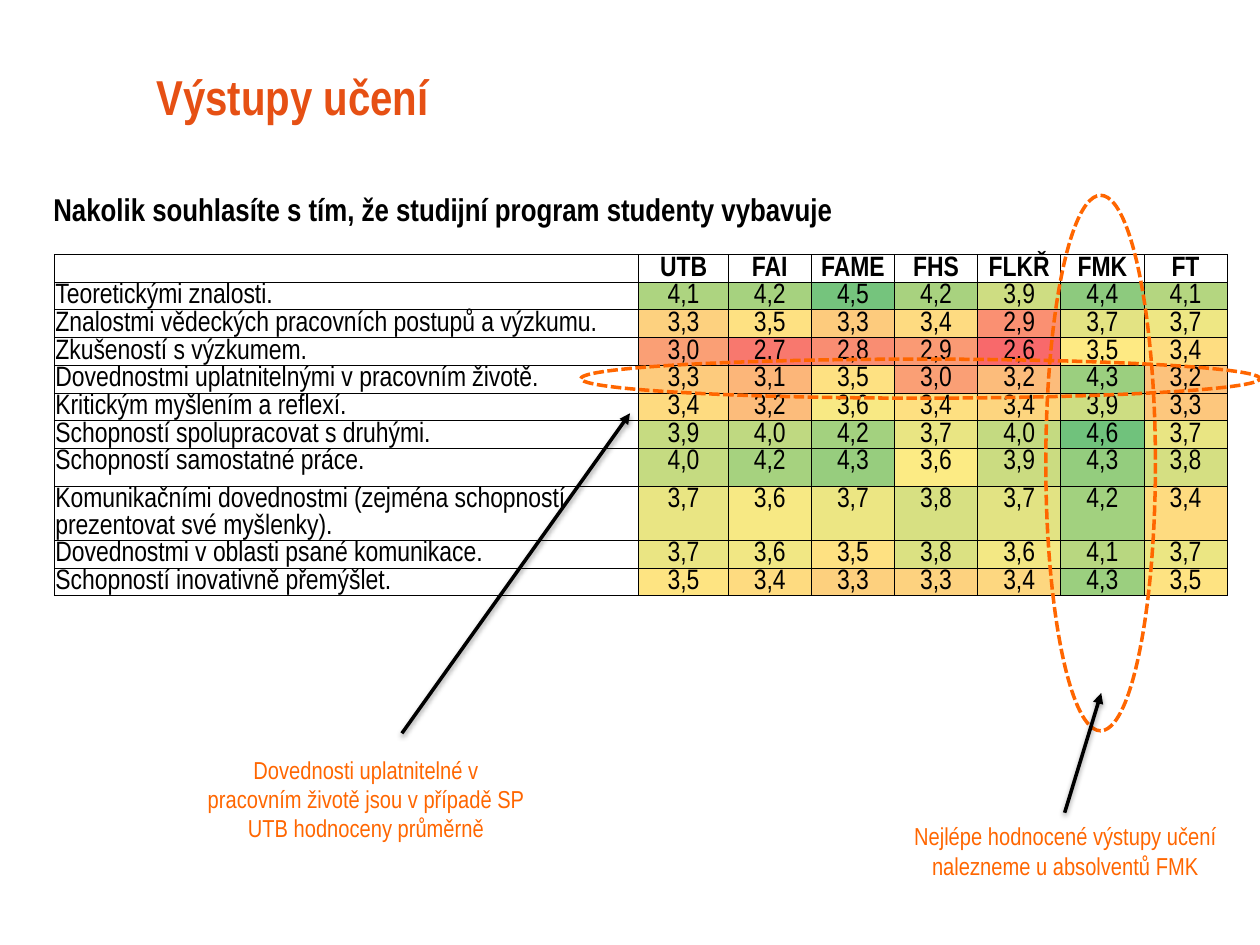
"""Build the slide on learning outcomes by faculty."""
from lxml import etree
from pptx import Presentation
from pptx.dml.color import RGBColor
from pptx.enum.dml import MSO_LINE
from pptx.enum.shapes import MSO_CONNECTOR, MSO_SHAPE
from pptx.enum.text import MSO_ANCHOR, MSO_AUTO_SIZE, PP_ALIGN
from pptx.oxml.ns import qn
from pptx.util import Inches, Pt

LEFT, CENTER = PP_ALIGN.LEFT, PP_ALIGN.CENTER
TOP, MIDDLE, BOTTOM = MSO_ANCHOR.TOP, MSO_ANCHOR.MIDDLE, MSO_ANCHOR.BOTTOM
FIT = MSO_AUTO_SIZE.SHAPE_TO_FIT_TEXT
DASH = MSO_LINE.SQUARE_DOT
OVAL = MSO_SHAPE.OVAL
STRAIGHT = MSO_CONNECTOR.STRAIGHT

FONT = "Arial Narrow"
RED = RGBColor(0xE6, 0x50, 0x14)
ORANGE = RGBColor(0xFF, 0x66, 0x00)
BLACK = RGBColor(0, 0, 0)

WIDTHS = [4.64, 0.71] + [0.66] * 6
HEIGHTS = [0.22] * 7 + [0.3, 0.43] + [0.22] * 2
HEAD = ["", "UTB", "FAI", "FAME", "FHS", "FLKŘ", "FMK", "FT"]
ROWS = [
    ("Teoretickými znalosti.",
     "4,1 4,2 4,5 4,2 3,9 4,4 4,1",
     "ADD480 A6D27F 75C47D A8D27F CEDD82 8DCA7E B4D680"),
    ("Znalostmi vědeckých pracovních postupů a výzkumu.",
     "3,3 3,5 3,3 3,4 2,9 3,7 3,7",
     "FDD17F FEE182 FDCB7D FEDB81 FA9072 E3E383 EEE784"),
    ("Zkušeností s výzkumem.",
     "3,0 2,7 2,8 2,9 2,6 3,5 3,4",
     "FA9F75 F8786E F98D72 FA9A74 F8696B FEEA83 FEDD81"),
    ("Dovednostmi uplatnitelnými v pracovním životě.",
     "3,3 3,1 3,5 3,0 3,2 4,3 3,2",
     "FDCB7D FCB679 FEE182 FA9F75 FCBC7B 9BCF7F FCC27C"),
    ("Kritickým myšlením a reflexí.",
     "3,4 3,2 3,6 3,4 3,4 3,9 3,3",
     "FEDB80 FCBC7B F8E984 FEE081 FDD57F CDDD82 FDC77D"),
    ("Schopností spolupracovat s druhými.",
     "3,9 4,0 4,2 3,7 4,0 4,6 3,7",
     "C6DB81 BFD981 A3D17F E9E583 C4DA81 70C27C E9E583"),
    ("Schopností samostatné práce.",
     "4,0 4,2 4,3 3,6 3,9 4,3 3,8",
     "C5DB81 A6D27F 97CD7E FCEB84 CBDC81 94CD7E D5DF82"),
    ("Komunikačními dovednostmi (zejména schopností prezentovat své myšlenky).",
     "3,7 3,6 3,7 3,8 3,7 4,2 3,4",
     "E9E583 F7E984 ECE683 D7E082 E2E383 A2D17F FEDB80"),
    ("Dovednostmi v oblasti psané komunikace.",
     "3,7 3,6 3,5 3,8 3,6 4,1 3,7",
     "EAE583 F1E784 FEE182 DBE182 F3E884 B8D780 EBE683"),
    ("Schopností inovativně přemýšlet.",
     "3,5 3,4 3,3 3,3 3,4 4,3 3,5",
     "FEE482 FEDB80 FDD07E FDD27F FDD780 9BCF7F FEE382"),
]


def add_run(para, text, size, color, bold=False):
    run = para.add_run()
    run.text = text
    font = run.font
    font.name, font.size, font.bold = FONT, Pt(size), bold
    font.color.rgb = color


def add_title(slide, text):
    title = slide.shapes.title
    title.left, title.top = Inches(1.14), Inches(0.36)
    title.width, title.height = Inches(8.11), Inches(0.81)
    title.text_frame.vertical_anchor = MIDDLE
    para = title.text_frame.paragraphs[0]
    para.alignment = LEFT
    add_run(para, text, 28, RED, True)


def add_text(slide, box, text, size, color, bold=False):
    frame = slide.shapes.add_textbox(*map(Inches, box)).text_frame
    frame.word_wrap = True
    frame.auto_size = FIT
    para = frame.paragraphs[0]
    para.alignment = CENTER
    add_run(para, text, size, color, bold)


def add_edges(cell):
    props = cell._tc.get_or_add_tcPr()
    for side in ("a:lnL", "a:lnR", "a:lnT", "a:lnB"):
        edge = etree.SubElement(props, qn(side), w=str(Pt(0.5)))
        fill = etree.SubElement(edge, qn("a:solidFill"))
        etree.SubElement(fill, qn("a:srgbClr"), val=str(BLACK))


def fill_cell(cell, text, align, color=None, head=False):
    cell.margin_left = cell.margin_right = cell.margin_top = Inches(0.01)
    cell.margin_bottom = 0
    cell.vertical_anchor = BOTTOM if head else TOP
    add_edges(cell)
    if color:
        cell.fill.solid()
        cell.fill.fore_color.rgb = RGBColor.from_string(color)
    else:
        cell.fill.background()
    para = cell.text_frame.paragraphs[0]
    para.alignment = align
    if text:
        add_run(para, text, 16, BLACK, head)
    else:
        mark = etree.SubElement(para._p, qn("a:endParaRPr"), sz="1600")
        etree.SubElement(mark, qn("a:latin"), typeface=FONT)


def add_grid(slide):
    size = map(Inches, (0.43, 2.02, sum(WIDTHS), sum(HEIGHTS)))
    table = slide.shapes.add_table(len(HEIGHTS), len(WIDTHS), *size).table
    table.first_row = table.horz_banding = False
    for col, width in zip(table.columns, WIDTHS):
        col.width = Inches(width)
    for row, height in zip(table.rows, HEIGHTS):
        row.height = Inches(height)
    for col, text in enumerate(HEAD):
        fill_cell(table.cell(0, col), text, CENTER, head=True)
    for row, (label, marks, colors) in enumerate(ROWS, 1):
        fill_cell(table.cell(row, 0), label, LEFT)
        for col, pair in enumerate(zip(marks.split(), colors.split()), 1):
            mark, color = pair
            fill_cell(table.cell(row, col), mark, CENTER, color)


def add_ring(slide, box, turn=0):
    ring = slide.shapes.add_shape(OVAL, *map(Inches, box))
    ring.rotation = turn
    ring.shadow.inherit = False
    ring.fill.background()
    ring.line.color.rgb = ORANGE
    ring.line.width = Pt(2)
    ring.line.dash_style = DASH


def add_arrow(slide, start, end):
    arrow = slide.shapes.add_connector(STRAIGHT, *map(Inches, start + end))
    arrow.line.color.rgb = BLACK
    arrow.line.width = Pt(2)
    etree.SubElement(arrow.line._ln, qn("a:tailEnd"), type="triangle")
    effects = etree.SubElement(arrow._element.spPr, qn("a:effectLst"))
    shade = etree.SubElement(effects, qn("a:outerShdw"), blurRad="40000",
                             dist="20000", dir="5400000", rotWithShape="0")
    color = etree.SubElement(shade, qn("a:srgbClr"), val=str(BLACK))
    etree.SubElement(color, qn("a:alpha"), val="38000")


def main():
    deck = Presentation()
    deck.slide_width, deck.slide_height = Inches(10), Inches(7.5)
    slide = deck.slides.add_slide(deck.slide_layouts[5])
    add_title(slide, "Výstupy učení")
    add_grid(slide)
    add_text(slide, (0, 1.46, 7.09, 0.4),
             "Nakolik souhlasíte s tím, že studijní program studenty vybavuje ",
             18, BLACK, True)
    add_ring(slide, (4.61, 2.85, 5.39, 0.31))
    add_ring(slide, (6.61, 3.24, 4.25, 0.87), 90)
    add_text(slide, (7.09, 6.47, 2.73, 0.57),
             "Nejlépe hodnocené výstupy učení nalezneme u absolventů FMK",
             14, ORANGE)
    add_text(slide, (1.54, 5.94, 2.73, 0.81),
             "Dovednosti uplatnitelné v pracovním životě jsou v případě SP "
             "UTB hodnoceny průměrně", 14, ORANGE)
    add_arrow(slide, (3.19, 5.82), (5, 3.28))
    add_arrow(slide, (8.45, 6.45), (8.74, 5.5))
    deck.save("out.pptx")


if __name__ == "__main__":
    main()
